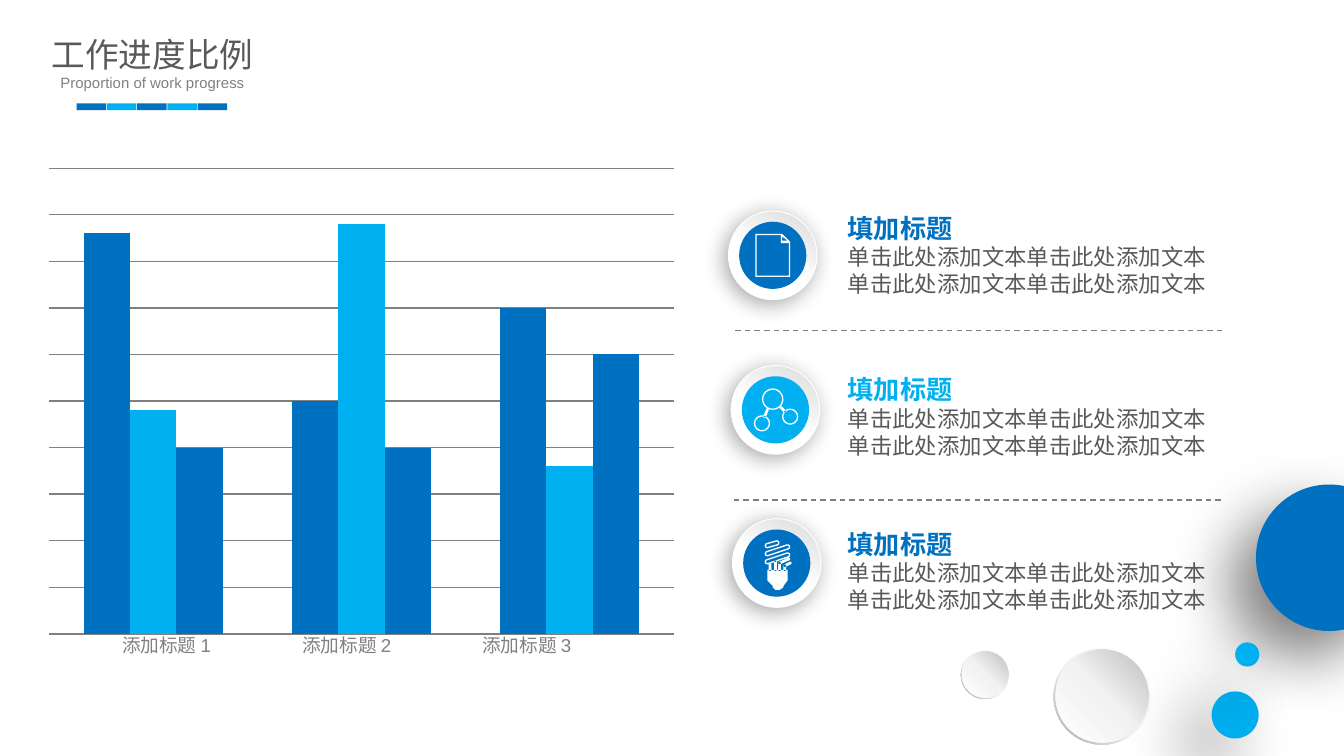
import math
from dataclasses import dataclass

import pptx
import pptx.chart.data
import pptx.dml.color
import pptx.enum.chart
import pptx.enum.dml
import pptx.enum.shapes
import pptx.enum.text
import pptx.oxml.ns
import pptx.util
from lxml import etree
from pptx.util import Inches, Pt

SHAPE = pptx.enum.shapes.MSO_SHAPE
ALIGN = pptx.enum.text.PP_ALIGN
qn = pptx.oxml.ns.qn


@dataclass(frozen=True)
class Theme:
    blue: str = "0070C0"
    sky: str = "00B0F0"
    white: str = "FFFFFF"
    dark: str = "595959"
    gray: str = "808080"
    font: str = "Arial"
    title: int = 18
    heading: int = 14
    body: int = 12
    label: int = 10
    subtitle: int = 8
    rim: tuple = ((0, "FFFFFF"), (55, "F2F2F2"), (100, "A6A6A6"))
    pearl: tuple = ((0, "FFFFFF"), (51, "F2F2F2"), (100, "BFBFBF"))
    badge: tuple = ((45, "FFFFFF"), (100, "D9D9D9"))
    ball_shadow: tuple = (50, 35, 20)
    badge_shadow: tuple = (34, 12, 3)


THEME = Theme()


def rgb(color):
    return pptx.dml.color.RGBColor.from_string(color)


def format_font(font, size, color, bold=False):
    values = {"name": THEME.font, "size": Pt(size), "bold": bold}
    for name, value in values.items():
        setattr(font, name, value)
    font.color.rgb = rgb(color)


def fill_frame(frame, lines, alignment=ALIGN.LEFT, wrap=True, margins=(0.1, 0.05)):
    """Write lines given as (text, size, color, bold)."""
    horizontal, vertical = (Inches(margin) for margin in margins)
    values = {"word_wrap": wrap, "auto_size": pptx.enum.text.MSO_AUTO_SIZE.SHAPE_TO_FIT_TEXT,
              "vertical_anchor": pptx.enum.text.MSO_ANCHOR.TOP,
              "margin_left": horizontal, "margin_right": horizontal,
              "margin_top": vertical, "margin_bottom": vertical}
    for name, value in values.items():
        setattr(frame, name, value)
    for index, (text, *font_format) in enumerate(lines):
        paragraph = frame.add_paragraph() if index else frame.paragraphs[0]
        paragraph.alignment = alignment
        run = paragraph.add_run()
        run.text = text
        format_font(run.font, *font_format)


def add_text(slide, box, lines, **options):
    shape = slide.shapes.add_textbox(*map(Inches, box))
    fill_frame(shape.text_frame, lines, **options)


def fill_plain(shape, color):
    shape.shadow.inherit = False
    shape.line.fill.background()
    shape.fill.solid()
    shape.fill.fore_color.rgb = rgb(color)


def add_filled(shapes, preset, box, color):
    shape = shapes.add_shape(preset, *map(Inches, box))
    fill_plain(shape, color)
    return shape


def add_circle(shapes, center, diameter, color, preset=SHAPE.OVAL):
    x, y = center
    box = (x - diameter / 2, y - diameter / 2, diameter, diameter)
    return add_filled(shapes, preset, box, color)


def set_gradient(shape, stops, clockwise_angle):
    shape.fill.gradient()
    shape.fill.gradient_angle = 360 - clockwise_angle
    stop_list = shape.element.spPr.find(qn("a:gradFill")).find(qn("a:gsLst"))
    for stop in list(stop_list):
        stop_list.remove(stop)
    for position, color in stops:
        stop = etree.SubElement(stop_list, qn("a:gs"), pos=str(position * 1000))
        etree.SubElement(stop, qn("a:srgbClr"), val=color)


def set_shadow(shape, opacity, blur, distance):
    effects = shape.element.spPr.find(qn("a:effectLst"))
    shadow = etree.SubElement(effects, qn("a:outerShdw"), blurRad=str(Pt(blur)),
                              dist=str(Pt(distance)), dir=str(135 * 60000),
                              algn="ctr", rotWithShape="0")
    color = etree.SubElement(shadow, qn("a:srgbClr"), val="000000")
    etree.SubElement(color, qn("a:alpha"), val=str(opacity * 1000))


def add_pearl(slide, center, diameter):
    shapes = slide.shapes.add_group_shape().shapes
    rim = add_circle(shapes, center, diameter, THEME.white, SHAPE.DONUT)
    rim.adjustments[0] = 0.05
    set_gradient(rim, THEME.rim, 135)
    pearl = add_circle(shapes, center, diameter * 0.96, THEME.white)
    set_gradient(pearl, THEME.pearl, 315)


def add_ball(slide, center, diameter, color):
    shapes = slide.shapes.add_group_shape().shapes
    set_shadow(add_circle(shapes, center, diameter, color), *THEME.ball_shadow)
    add_circle(shapes, center, diameter * 0.95, color)


def capsule(start, end, radius):
    """Outline of a round-ended bar; a circle when start equals end."""
    heading = math.atan2(end[1] - start[1], end[0] - start[0])
    points = []
    for (x, y), turn in ((end, -90), (start, 90)):
        for step in range(0, 181, 15):
            angle = heading + math.radians(turn + step)
            points.append((x + radius * math.cos(angle), y + radius * math.sin(angle)))
    return points


def ring(start, end, radius):
    return [capsule(start, end, radius), capsule(start, end, radius - 0.01)]


def document_contours():
    return [[(5.62, 1.74), (5.82, 1.74), (5.88, 1.8), (5.88, 2.06), (5.62, 2.06)],
            [(5.82, 1.76), (5.86, 1.79), (5.82, 1.79)],
            [(5.63, 1.75), (5.81, 1.75), (5.81, 1.81), (5.87, 1.81), (5.87, 2.05), (5.63, 2.05)]]


def network_contours():
    contours = []
    for center, radius in (((5.75, 2.97), 0.08), ((5.67, 3.15), 0.06), ((5.88, 3.1), 0.06)):
        contours += ring(center, center, radius)
    links = (((5.71, 3.05), (5.69, 3.1)), ((5.81, 3.03), (5.84, 3.06)))
    return contours + [capsule(start, end, 0.01) for start, end in links]


def bulb_contours():
    contours = [[(5.71, 4.24), (5.86, 4.24), (5.86, 4.32), (5.83, 4.36), (5.83, 4.37), (5.8, 4.39),
                 (5.77, 4.39), (5.75, 4.37), (5.75, 4.36), (5.71, 4.32)]]
    for start, end in (((5.71, 4.06), (5.78, 4.04)), ((5.71, 4.12), (5.86, 4.07)),
                       ((5.71, 4.18), (5.86, 4.13))):
        contours += ring(start, end, 0.02)
    tubes = (((5.73, 4.24), (5.73, 4.2)), ((5.77, 4.24), (5.77, 4.18)),
             ((5.8, 4.24), (5.8, 4.19)), ((5.8, 4.19), (5.87, 4.16)),
             ((5.84, 4.24), (5.84, 4.21)), ((5.84, 4.21), (5.88, 4.19)))
    return contours + [capsule(start, end, 0.01) for start, end in tubes]


def add_badge(slide, center, color, contours):
    shapes = slide.shapes.add_group_shape().shapes
    plate = add_circle(shapes, center, 0.66, THEME.white)
    set_gradient(plate, THEME.badge, 300)
    plate.line.color.rgb = rgb(THEME.white)
    plate.line.width = Pt(0.5)
    set_shadow(plate, *THEME.badge_shadow)
    add_circle(shapes, center, 0.5, color)
    outlines = [[(Inches(x), Inches(y)) for x, y in contour] for contour in contours]
    builder = shapes.build_freeform(*outlines[0][0])
    for index, outline in enumerate(outlines):
        if index:
            builder.move_to(*outline[0])
        builder.add_line_segments(outline[1:], close=True)
    fill_plain(builder.convert_to_shape(), THEME.white)


def add_divider(slide, left, y):
    line = slide.shapes.add_connector(pptx.enum.shapes.MSO_CONNECTOR.STRAIGHT,
                                      Inches(left), Inches(y), Inches(9.09), Inches(y))
    line.line.color.rgb = rgb(THEME.gray)
    line.line.width = Pt(0.75)
    line.line.dash_style = pptx.enum.dml.MSO_LINE.DASH
    etree.SubElement(line.element.spPr, qn("a:effectLst"))


def add_progress_chart(slide):
    data = pptx.chart.data.CategoryChartData()
    data.categories = ["1", "2", "3"]
    for name, values in (("Series 1", (4.3, 2.5, 3.5)), ("Series 2", (2.4, 4.4, 1.8)),
                         ("Series 3", (2, 2, 3))):
        data.add_series(name, values)
    chart = slide.shapes.add_chart(pptx.enum.chart.XL_CHART_TYPE.COLUMN_CLUSTERED,
                                   *map(Inches, (0.27, 1.18, 4.84, 3.61)), data).chart
    format_font(chart.font, THEME.title, "000000")
    chart.has_legend = chart.has_title = False
    chart.category_axis.visible = chart.value_axis.visible = False
    scale = {"minimum_scale": 0, "maximum_scale": 5, "major_unit": 0.5, "has_major_gridlines": True}
    for name, value in scale.items():
        setattr(chart.value_axis, name, value)
    gridline = chart.value_axis.major_gridlines.format.line
    gridline.color.rgb = rgb(THEME.gray)
    gridline.width = Pt(0.75)
    plot = chart.plots[0]
    plot.gap_width, plot.overlap, plot.vary_by_categories = 150, 0, False
    for series, color in zip(plot.series, (THEME.blue, THEME.sky, THEME.blue)):
        series.format.fill.solid()
        series.format.fill.fore_color.rgb = rgb(color)
    area = chart.element.find(".//" + qn("c:plotArea"))
    layout = area.find(qn("c:layout"))
    if layout is None:
        layout = etree.Element(qn("c:layout"))
        area.insert(0, layout)
    manual = etree.SubElement(layout, qn("c:manualLayout"))
    for tag, value in (("layoutTarget", "inner"), ("xMode", "edge"), ("yMode", "edge"),
                       ("x", "0.02"), ("y", "0.02"), ("w", "0.96"), ("h", "0.96")):
        etree.SubElement(manual, qn("c:" + tag), val=value)


def add_header(slide):
    title = slide.shapes.title
    title.left, title.top, title.width, title.height = map(Inches, (0.3, 0.21, 1.67, 0.38))
    fill_frame(title.text_frame, [("工作进度比例", THEME.title, THEME.dark)],
               alignment=ALIGN.CENTER, wrap=False, margins=(0.07, 0.04))
    add_text(slide, (0.17, 0.5, 1.93, 0.24),
             [("Proportion of work progress", THEME.subtitle, THEME.gray)], alignment=ALIGN.CENTER)
    for index in range(5):
        color = THEME.sky if index % 2 else THEME.blue
        add_filled(slide.shapes, SHAPE.RECTANGLE, (0.57 + index * 0.225, 0.77, 0.22, 0.05), color)


def main():
    presentation = pptx.Presentation()
    presentation.slide_width = Inches(10)
    presentation.slide_height = presentation.slide_width * 9 // 16
    slide = presentation.slides.add_slide(presentation.slide_layouts[5])
    for center, diameter in (((8.2, 5.18), 0.72), ((7.33, 5.02), 0.36)):
        add_pearl(slide, center, diameter)
    for center, diameter, color in (((9.89, 4.15), 1.09, THEME.blue),
                                    ((9.19, 5.32), 0.35, THEME.sky), ((9.28, 4.87), 0.18, THEME.sky)):
        add_ball(slide, center, diameter, color)
    add_progress_chart(slide)
    for index in range(3):
        add_text(slide, (0.76 + index * 1.34, 4.67, 0.96, 0.27),
                 [(f"添加标题 {index + 1}", THEME.label, THEME.gray)], alignment=ALIGN.CENTER)
    body = ("单击此处添加文本单击此处添加文本", THEME.body, THEME.dark)
    for top, center, color, contours in (
            (1.53, (5.75, 1.9), THEME.blue, document_contours()),
            (2.73, (5.77, 3.05), THEME.sky, network_contours()),
            (3.88, (5.78, 4.19), THEME.blue, bulb_contours())):
        add_text(slide, (6.21, top, 3.04, 0.74), [("填加标题", THEME.heading, color, True), body, body])
        add_badge(slide, center, color, contours)
    add_divider(slide, 5.47, 2.46)
    add_divider(slide, 5.46, 3.72)
    add_header(slide)
    presentation.save("out.pptx")


if __name__ == "__main__":
    main()
